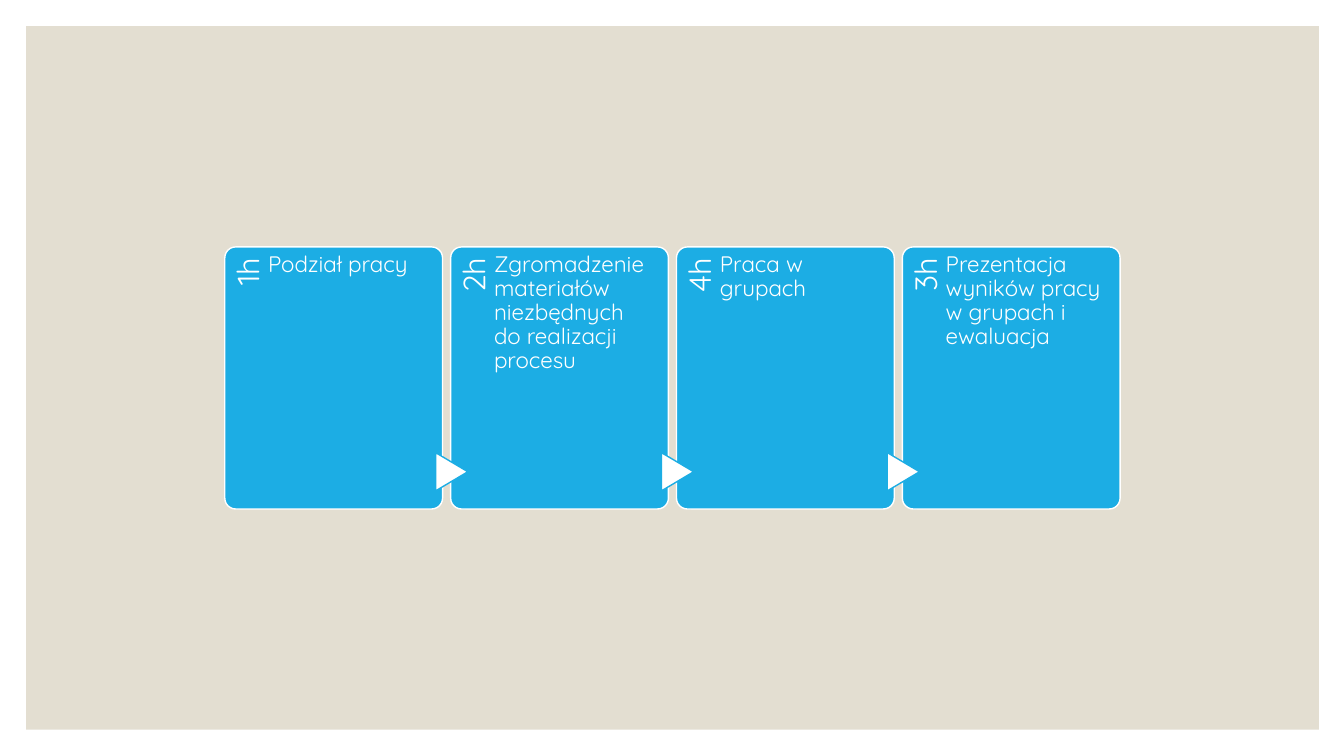
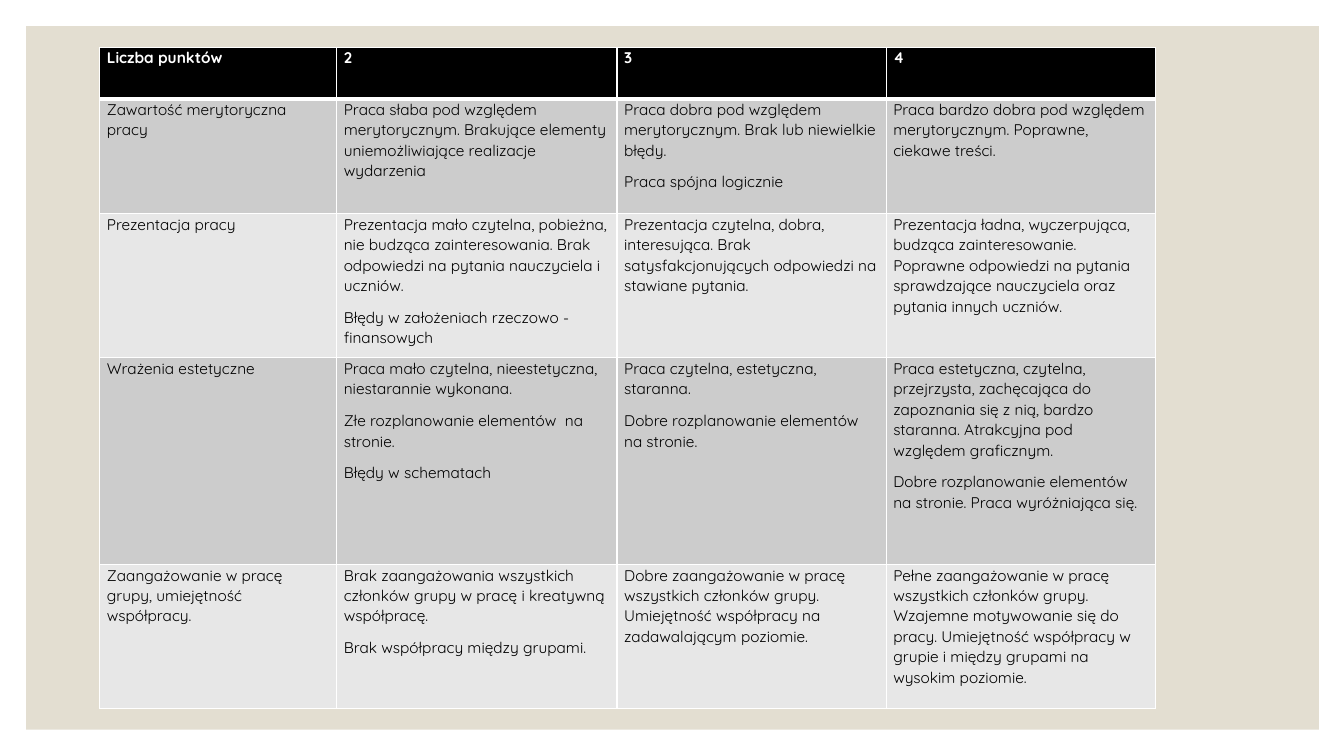
from lxml import etree
from pptx import Presentation
from pptx.dml.color import RGBColor
from pptx.enum.shapes import MSO_SHAPE
from pptx.enum.text import PP_ALIGN
from pptx.oxml.ns import qn
from pptx.util import Emu, Pt

RECTANGLE = MSO_SHAPE.RECTANGLE
ROUNDED = MSO_SHAPE.ROUNDED_RECTANGLE
TRIANGLE = MSO_SHAPE.FLOWCHART_EXTRACT
LEFT, RIGHT = PP_ALIGN.LEFT, PP_ALIGN.RIGHT

EMU_PER_PX = 9144  # 100 px to the inch
BLANK_LAYOUT = 6

STAGES = [
    ("1h", "Podział pracy"),
    ("2h", "Zgromadzenie materiałów niezbędnych do realizacji procesu"),
    ("4h", "Praca w grupach"),
    ("3h", "Prezentacja wyników pracy w grupach i ewaluacja"),
]
STAGE_LEFT, STAGE_TOP, STAGE_PITCH = 223, 245, 224
STAGE_WIDTH, STAGE_HEIGHT = 216, 260

COLUMN_WIDTHS = [235, 278, 267, 267]
ROW_HEIGHTS = [51, 114, 143, 205, 143]
CRITERIA = [
    ["Liczba punktów", "2", "3", "4"],
    [
        "Zawartość merytoryczna pracy",
        "Praca słaba pod względem merytorycznym. Brakujące elementy "
        "uniemożliwiające realizacje wydarzenia",
        "Praca dobra pod względem merytorycznym. Brak lub niewielkie błędy.\n"
        "Praca spójna logicznie",
        "Praca bardzo dobra pod względem merytorycznym. Poprawne, ciekawe treści.",
    ],
    [
        "Prezentacja pracy",
        "Prezentacja mało czytelna, pobieżna, nie budząca zainteresowania. "
        "Brak odpowiedzi na pytania nauczyciela i uczniów.\n"
        "Błędy w założeniach rzeczowo - finansowych",
        "Prezentacja czytelna, dobra, interesująca. Brak satysfakcjonujących "
        "odpowiedzi na stawiane pytania.",
        "Prezentacja ładna, wyczerpująca, budząca zainteresowanie. Poprawne "
        "odpowiedzi na pytania sprawdzające nauczyciela oraz pytania innych uczniów.",
    ],
    [
        "Wrażenia estetyczne",
        "Praca mało czytelna, nieestetyczna, niestarannie wykonana.\n"
        "Złe rozplanowanie elementów  na stronie.\n"
        "Błędy w schematach",
        "Praca czytelna, estetyczna, staranna.\n"
        "Dobre rozplanowanie elementów na stronie.",
        "Praca estetyczna, czytelna, przejrzysta, zachęcająca do zapoznania się "
        "z nią, bardzo staranna. Atrakcyjna pod względem graficznym.\n"
        "Dobre rozplanowanie elementów na stronie. Praca wyróżniająca się.",
    ],
    [
        "Zaangażowanie w pracę grupy, umiejętność współpracy.",
        "Brak zaangażowania wszystkich członków grupy w pracę i kreatywną współpracę.\n"
        "Brak współpracy między grupami.",
        "Dobre zaangażowanie w pracę wszystkich członków grupy. Umiejętność "
        "współpracy na zadawalającym poziomie.",
        "Pełne zaangażowanie w pracę wszystkich członków grupy. Wzajemne "
        "motywowanie się do pracy. Umiejętność współpracy w grupie i między "
        "grupami na wysokim poziomie.",
    ],
]


def px(length):
    return Emu(length * EMU_PER_PX)


def color(hex_text):
    return RGBColor.from_string(hex_text)


class Deck:
    """Holds the shared style and the slide being drawn."""

    FONT = "Quicksand"
    WHITE, BLACK = "FFFFFF", "000000"
    SAND, BLUE = "E3DED1", "1CADE4"
    BANDS = ["E7E7E7", "CCCCCC"]

    def __init__(self):
        self.presentation = Presentation()
        self.presentation.slide_width = px(1333)
        self.presentation.slide_height = px(750)
        self.page = None

    def new_page(self):
        layout = self.presentation.slide_layouts[BLANK_LAYOUT]
        self.page = self.presentation.slides.add_slide(layout)
        self.shape(RECTANGLE, 26, 26, 1282, 698, self.SAND)

    def shape(self, preset, left, top, width, height, fill, line=None, rotation=0):
        shape = self.page.shapes.add_shape(
            preset, px(left), px(top), px(width), px(height))
        shape.shadow.inherit = False
        shape.rotation = rotation
        shape.fill.solid()
        shape.fill.fore_color.rgb = color(fill)
        if line:
            shape.line.color.rgb = color(line)
            shape.line.width = Pt(1)
        else:
            shape.line.fill.background()
        return shape

    def set_text(self, frame, text, size, text_color, spacing,
                 align=LEFT, after=0, bold=False):
        frame.text = text
        frame.word_wrap = True
        for para in frame.paragraphs:
            para.alignment = align
            para.line_spacing = spacing
            para.space_after = Pt(after)
            for span in para.runs:
                span.font.name = self.FONT
                span.font.size = Pt(size)
                span.font.bold = bold
                span.font.color.rgb = color(text_color)

    def set_margins(self, holder, left, top, right, bottom):
        """Set the insets of a text frame or a table cell."""
        holder.margin_left, holder.margin_top = px(left), px(top)
        holder.margin_right, holder.margin_bottom = px(right), px(bottom)

    def text(self, text, left, top, width, height, size, margins,
             align=LEFT, rotation=0):
        box = self.page.shapes.add_textbox(
            px(left), px(top), px(width), px(height))
        box.rotation = rotation
        self.set_margins(box.text_frame, *margins)
        self.set_text(box.text_frame, text, size, self.WHITE, 0.9, align)

    def stage(self, left, duration, task, has_arrow):
        card = self.shape(ROUNDED, left, STAGE_TOP, STAGE_WIDTH, STAGE_HEIGHT,
                          self.BLUE, self.WHITE)
        card.adjustments[0] = 0.05
        self.text(duration, left - 85, STAGE_TOP + 85, 213, 43, 22,
                  (0, 8, 11, 0), RIGHT, 270)
        if has_arrow:
            self.shape(TRIANGLE, left - 18, STAGE_TOP + 207, 38, 32,
                       self.WHITE, self.BLUE, 90)
        self.text(task, left + 43, STAGE_TOP, 161, STAGE_HEIGHT, 16, (0, 6, 0, 0))

    def cell_borders(self, cell, top, bottom):
        """Draw white borders; must run before the cell is filled."""
        properties = cell._tc.get_or_add_tcPr()
        for side, points in (("L", 1), ("R", 1), ("T", top), ("B", bottom)):
            line = etree.SubElement(properties, qn(f"a:ln{side}"), w=str(Pt(points)))
            fill = etree.SubElement(line, qn("a:solidFill"))
            etree.SubElement(fill, qn("a:srgbClr"), val=self.WHITE)

    def table(self, left, top, widths, heights, rows):
        table = self.page.shapes.add_table(
            len(rows), len(widths), px(left), px(top),
            px(sum(widths)), px(sum(heights))).table
        for column, width in zip(table.columns, widths):
            column.width = px(width)
        for row_index, texts in enumerate(rows):
            table.rows[row_index].height = px(heights[row_index])
            header = row_index == 0
            fill = self.BLACK if header else self.BANDS[row_index % 2]
            for column_index, text in enumerate(texts):
                cell = table.cell(row_index, column_index)
                self.cell_borders(cell, top=3 if row_index == 1 else 1,
                                  bottom=3 if header else 1)
                cell.fill.solid()
                cell.fill.fore_color.rgb = color(fill)
                self.set_margins(cell, 7, 0, 7, 0)
                self.set_text(cell.text_frame, text, 11,
                              self.WHITE if header else self.BLACK,
                              1.06, after=8, bold=header)

    def save(self):
        self.presentation.save("out.pptx")


def main():
    deck = Deck()

    deck.new_page()
    for index, (duration, task) in enumerate(STAGES):
        deck.stage(STAGE_LEFT + index * STAGE_PITCH, duration, task, index > 0)

    deck.new_page()
    deck.table(99, 47, COLUMN_WIDTHS, ROW_HEIGHTS, CRITERIA)

    deck.save()


if __name__ == "__main__":
    main()
